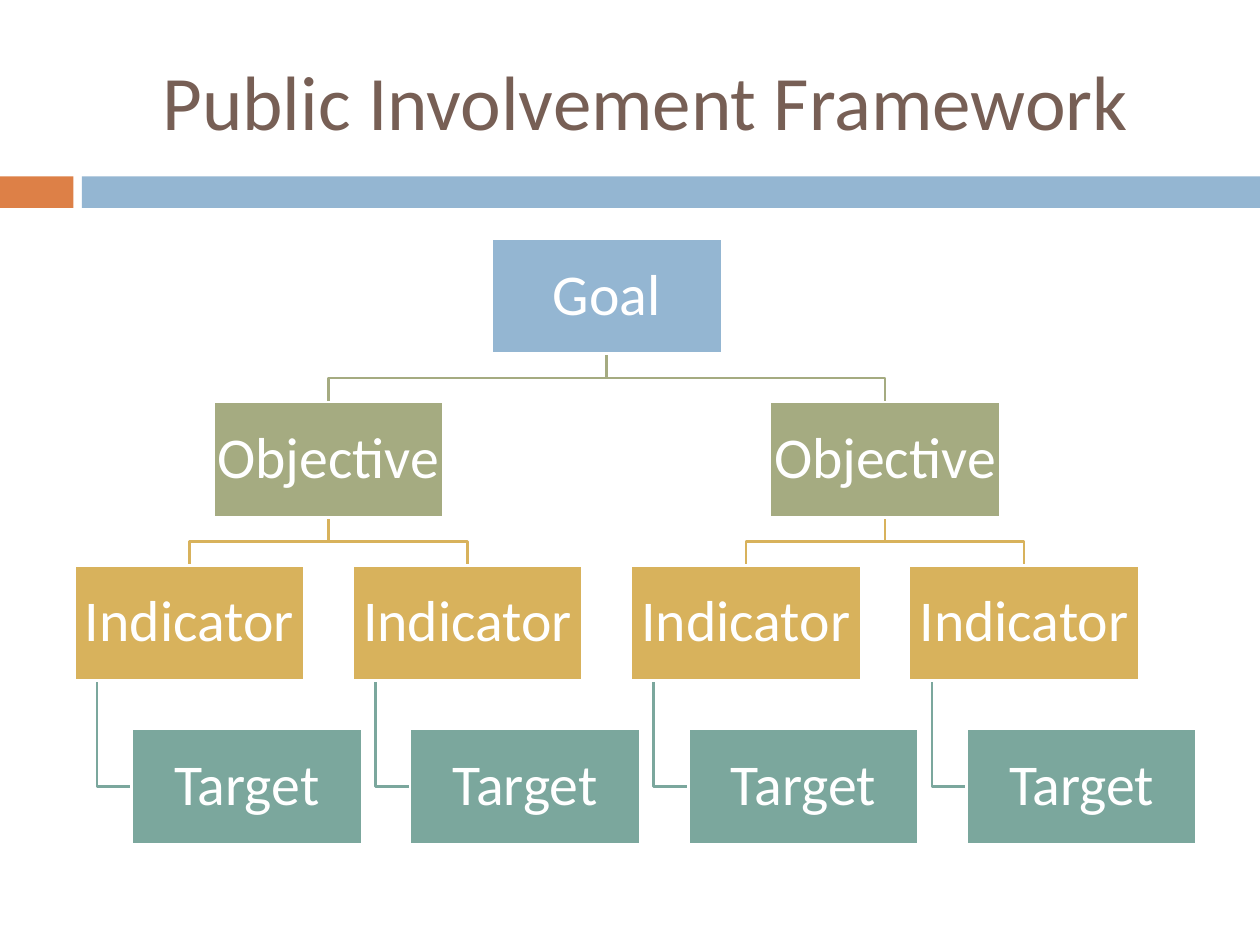
from pptx import Presentation
from pptx.dml.color import RGBColor
from pptx.enum.shapes import MSO_SHAPE as Shape
from pptx.enum.text import MSO_ANCHOR as Anchor, PP_ALIGN as Align
from pptx.util import Pt

FONT = "Calibri"
BROWN, ORANGE, WHITE = "775F55", "DD8047", "FFFFFF"
BLUE, GREEN, GOLD, TEAL = "94B6D2", "A5AB81", "D8B25C", "7BA79D"
LINE_WIDTH = 1.5
NODE_WIDTH, NODE_HEIGHT = 131.6, 65.8
ROW_STEP = 93.4


def color(hex_value):
    """Turn a hex string into a colour."""
    return RGBColor.from_string(hex_value)


def add_rect(slide, left, top, width, height, fill):
    """Add a plain filled rectangle without an outline."""
    rect = slide.shapes.add_shape(
        Shape.RECTANGLE, Pt(left), Pt(top), Pt(width), Pt(height))
    rect.shadow.inherit = False
    rect.fill.solid()
    rect.fill.fore_color.rgb = color(fill)
    rect.line.fill.background()
    return rect


def write_text(frame, text, size, text_color, wrap=True):
    """Write one centred line of text into a frame."""
    frame.word_wrap = wrap
    frame.vertical_anchor = Anchor.MIDDLE
    paragraph = frame.paragraphs[0]
    paragraph.text = text
    paragraph.alignment = Align.CENTER
    paragraph.font.name = FONT
    paragraph.font.size = Pt(size)
    paragraph.font.color.rgb = color(text_color)
    return paragraph


def add_title(slide, left, top, width, height):
    """Add the slide title."""
    title = slide.shapes.add_textbox(Pt(left), Pt(top), Pt(width), Pt(height))
    write_text(title.text_frame, "Public Involvement Framework", 44, BROWN)


def add_band(slide, left, top, width, height):
    """Add the two-colour band below the title."""
    accent_width, gap = 42, 4.8
    bar_offset = accent_width + gap
    add_rect(slide, left, top, accent_width, height, ORANGE)
    add_rect(slide, left + bar_offset, top, width - bar_offset, height, BLUE)


def add_branch(slide, points, line_color):
    """Add an open angled line through the given points."""
    start, *corners = [(Pt(x), Pt(y)) for x, y in points]
    builder = slide.shapes.build_freeform(*start)
    builder.add_line_segments(corners, close=False)
    branch = builder.convert_to_shape()
    branch.shadow.inherit = False
    branch.fill.background()
    branch.line.color.rgb = color(line_color)
    branch.line.width = Pt(LINE_WIDTH)


def add_fork(slide, parent_x, child_x, parent_top, line_color):
    """Link a parent's bottom centre to a child's top centre."""
    start, end = parent_top + NODE_HEIGHT, parent_top + ROW_STEP
    middle = (start + end) / 2
    add_branch(slide, [(parent_x, start), (parent_x, middle),
                       (child_x, middle), (child_x, end)], line_color)


def add_node(slide, center, top, text, fill):
    """Add one labelled box of the tree."""
    node = add_rect(slide, center - NODE_WIDTH / 2, top,
                    NODE_WIDTH, NODE_HEIGHT, fill)
    node.line.color.rgb = color(WHITE)
    node.line.width = Pt(LINE_WIDTH)
    frame = node.text_frame
    frame.margin_left = frame.margin_right = Pt(1.6)
    frame.margin_top = frame.margin_bottom = Pt(1.6)
    write_text(frame, text, 33, WHITE, wrap=False).line_spacing = 0.9


def add_tree(slide, left, top, width):
    """Add the goal, objective, indicator and target tree."""
    indent = NODE_WIDTH / 4
    stem_inset = NODE_WIDTH / 10
    column_step = (width - NODE_WIDTH - indent) / 3
    indicators = [left + NODE_WIDTH / 2 + i * column_step for i in range(4)]
    objectives = [(a + b) / 2 for a, b in zip(indicators[::2], indicators[1::2])]
    goal = sum(objectives) / 2
    targets = [center + indent for center in indicators]
    tops = [top + row * ROW_STEP for row in range(4)]

    for objective in objectives:
        add_fork(slide, goal, objective, tops[0], GREEN)
    for i, indicator in enumerate(indicators):
        add_fork(slide, objectives[i // 2], indicator, tops[1], GOLD)
        edge = indicator - NODE_WIDTH / 2
        stem, target_middle = edge + stem_inset, tops[3] + NODE_HEIGHT / 2
        add_branch(slide, [(stem, tops[2] + NODE_HEIGHT), (stem, target_middle),
                           (edge + indent, target_middle)], TEAL)

    levels = [("Goal", BLUE, [goal]), ("Objective", GREEN, objectives),
              ("Indicator", GOLD, indicators), ("Target", TEAL, targets)]
    for level_top, (label, fill, centers) in zip(tops, levels):
        for center in centers:
            add_node(slide, center, level_top, label, fill)


def main():
    """Build and save the slide."""
    deck = Presentation()
    deck.slide_width, deck.slide_height = Pt(720), Pt(540)
    slide = deck.slides.add_slide(deck.slide_layouts[6])
    add_band(slide, 0, 100.8, 720, 18)
    add_title(slide, 48, 18, 642, 78)
    add_tree(slide, 42.4, 136.4, 641.5)
    deck.save("out.pptx")


if __name__ == "__main__":
    main()
